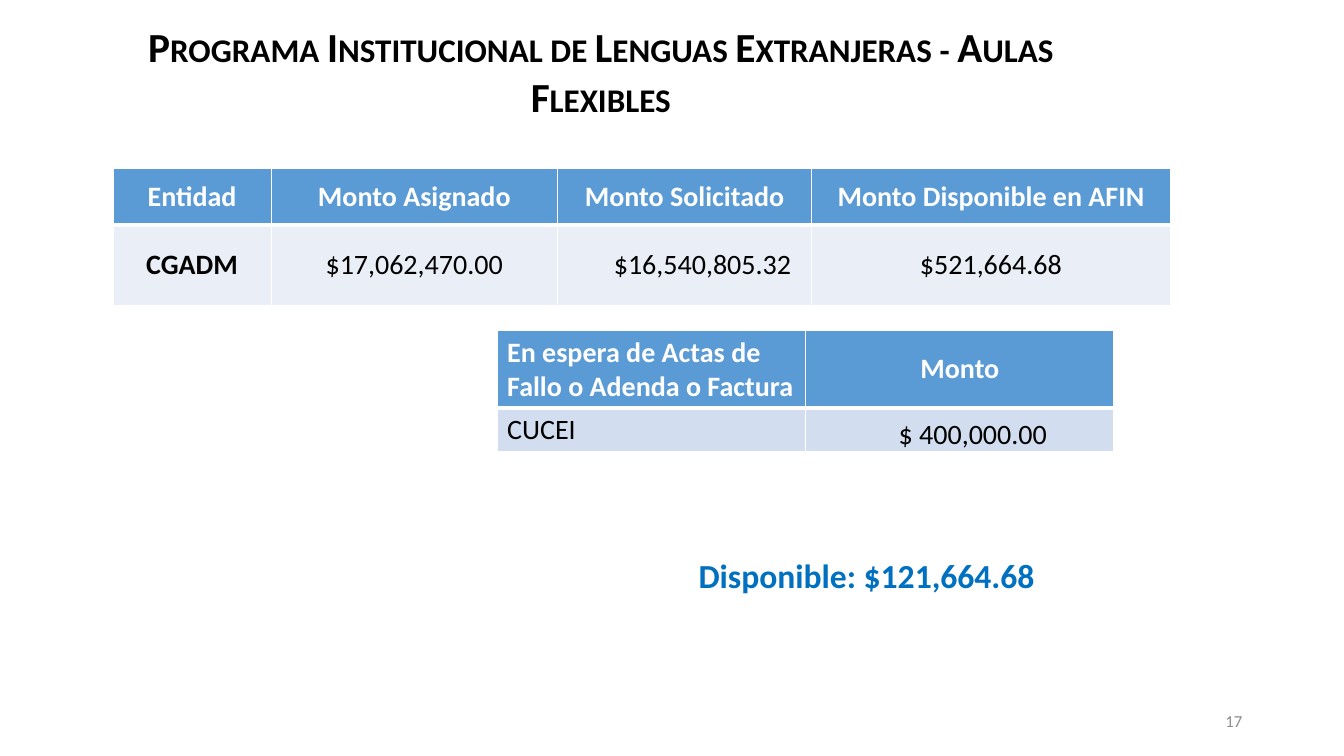
"""Build the budget slide for the foreign languages programme."""
from dataclasses import dataclass

from lxml.etree import SubElement
from pptx import Presentation
from pptx.dml.color import RGBColor
from pptx.enum.text import MSO_VERTICAL_ANCHOR as Anchor, PP_PARAGRAPH_ALIGNMENT as Align
from pptx.oxml.ns import qn
from pptx.slide import Slide
from pptx.table import _Cell as Cell
from pptx.text.text import TextFrame
from pptx.util import Inches, Pt

FONT = "Calibri"
BLACK = RGBColor(0x00, 0x00, 0x00)
WHITE = RGBColor(0xFF, 0xFF, 0xFF)
GRAY = RGBColor(0x8C, 0x8C, 0x8C)
ACCENT = RGBColor(0x00, 0x70, 0xC0)
HEADER_BLUE = RGBColor(0x5B, 0x9B, 0xD5)
PALE_BLUE = RGBColor(0xEA, 0xEF, 0xF7)
LIGHT_BLUE = RGBColor(0xD2, 0xDE, 0xEF)

Box = tuple[float, float, float, float]
DEFAULT_INSETS: Box = (0.1, 0.05, 0.1, 0.05)
TIGHT: Box = (0.07, 0.07, 0.07, 0.07)
ROOMY: Box = (0.2, 0.2, 0.2, 0.2)


@dataclass(frozen=True)
class Label:
    text: str
    box: Box
    size: float
    color: RGBColor
    bold: bool = True
    align: Align = Align.LEFT
    anchor: Anchor = Anchor.TOP
    insets: Box = DEFAULT_INSETS
    small_caps: bool = False


@dataclass(frozen=True)
class Entry:
    text: str
    bold: bool = False
    align: Align = Align.CENTER
    anchor: Anchor = Anchor.MIDDLE
    insets: Box = TIGHT


@dataclass(frozen=True)
class Grid:
    left: float
    top: float
    widths: list[float]
    heights: list[float]
    body_fill: RGBColor
    rows: list[list[Entry]]


LABELS = [
    Label("17", (9.42, 6.95, 3, 0.4), 12, GRAY, False, Align.RIGHT, Anchor.MIDDLE),
    Label("Programa Institucional de Lenguas Extranjeras - Aulas Flexibles",
          (0.61, 0.33, 10.7, 0.75), 29.5, BLACK, True, Align.CENTER, Anchor.MIDDLE,
          (0.13, 0.07, 0.13, 0.07), True),
    Label("Disponible: $121,664.68", (6.83, 5.46, 4.78, 0.5), 24, ACCENT),
]

HEADINGS = ["Entidad", "Monto Asignado", "Monto Solicitado", "Monto Disponible en AFIN"]
GRIDS = [
    Grid(1.12, 1.67, [1.57, 2.84, 2.52, 3.56], [0.56, 0.8], PALE_BLUE, [
        [Entry(heading, True) for heading in HEADINGS],
        [Entry("CGADM", True),
         Entry("$17,062,470.00", insets=ROOMY),
         Entry("$16,540,805.32", align=Align.RIGHT, insets=ROOMY),
         Entry("$521,664.68", insets=ROOMY)],
    ]),
    Grid(4.93, 3.28, [3.06, 3.06], [0.77, 0.43], LIGHT_BLUE, [
        [Entry("En espera de Actas de Fallo o Adenda o Factura", True,
               Align.LEFT, Anchor.TOP, DEFAULT_INSETS),
         Entry("Monto", True, insets=DEFAULT_INSETS)],
        [Entry("CUCEI", False, Align.LEFT, Anchor.TOP, DEFAULT_INSETS),
         Entry("$ 400,000.00", anchor=Anchor.BOTTOM, insets=(0.27, 0.01, 0.01, 0))],
    ]),
]


def set_insets(holder: TextFrame | Cell, insets: Box) -> None:
    """Set the left, top, right and bottom margins."""
    for side, inset in zip(("left", "top", "right", "bottom"), insets):
        setattr(holder, f"margin_{side}", Inches(inset))


def write(frame: TextFrame, item: Label | Entry, size: float, color: RGBColor,
          small_caps: bool = False) -> None:
    """Write one styled run into the first paragraph."""
    paragraph = frame.paragraphs[0]
    paragraph.alignment = item.align
    run = paragraph.add_run()
    run.text = item.text
    run.font.name = FONT
    run.font.size = Pt(size)
    run.font.bold = item.bold
    run.font.color.rgb = color
    if small_caps:
        run._r.get_or_add_rPr().set("cap", "small")


def add_label(slide: Slide, label: Label) -> None:
    """Add a text box."""
    frame = slide.shapes.add_textbox(*map(Inches, label.box)).text_frame
    frame.word_wrap = True
    frame.vertical_anchor = label.anchor
    set_insets(frame, label.insets)
    write(frame, label, label.size, label.color, label.small_caps)


def add_borders(cell: Cell, is_header: bool) -> None:
    """Draw white borders with a thick rule below the header."""
    thick_side = "B" if is_header else "T"
    properties = cell._tc.get_or_add_tcPr()
    for side in "LRTB":
        width = Pt(3 if side == thick_side else 1)
        line = SubElement(properties, qn(f"a:ln{side}"), w=str(width))
        fill = SubElement(line, qn("a:solidFill"))
        SubElement(fill, qn("a:srgbClr"), val=str(WHITE))


def add_grid(slide: Slide, grid: Grid) -> None:
    """Add a table with a blue header row."""
    table = slide.shapes.add_table(
        len(grid.heights), len(grid.widths), Inches(grid.left), Inches(grid.top),
        Inches(sum(grid.widths)), Inches(sum(grid.heights))).table
    for column, width in zip(table.columns, grid.widths):
        column.width = Inches(width)
    for row_index, entries in enumerate(grid.rows):
        is_header = row_index == 0
        table.rows[row_index].height = Inches(grid.heights[row_index])
        for column_index, entry in enumerate(entries):
            cell = table.cell(row_index, column_index)
            cell.vertical_anchor = entry.anchor
            set_insets(cell, entry.insets)
            add_borders(cell, is_header)
            cell.fill.solid()
            cell.fill.fore_color.rgb = HEADER_BLUE if is_header else grid.body_fill
            write(cell.text_frame, entry, 20, WHITE if is_header else BLACK)


def main() -> None:
    """Create and save the presentation."""
    presentation = Presentation()
    presentation.slide_width = Inches(13.33)
    presentation.slide_height = Inches(7.5)
    slide = presentation.slides.add_slide(presentation.slide_layouts[6])
    for label in LABELS:
        add_label(slide, label)
    for grid in GRIDS:
        add_grid(slide, grid)
    presentation.save("out.pptx")


if __name__ == "__main__":
    main()
